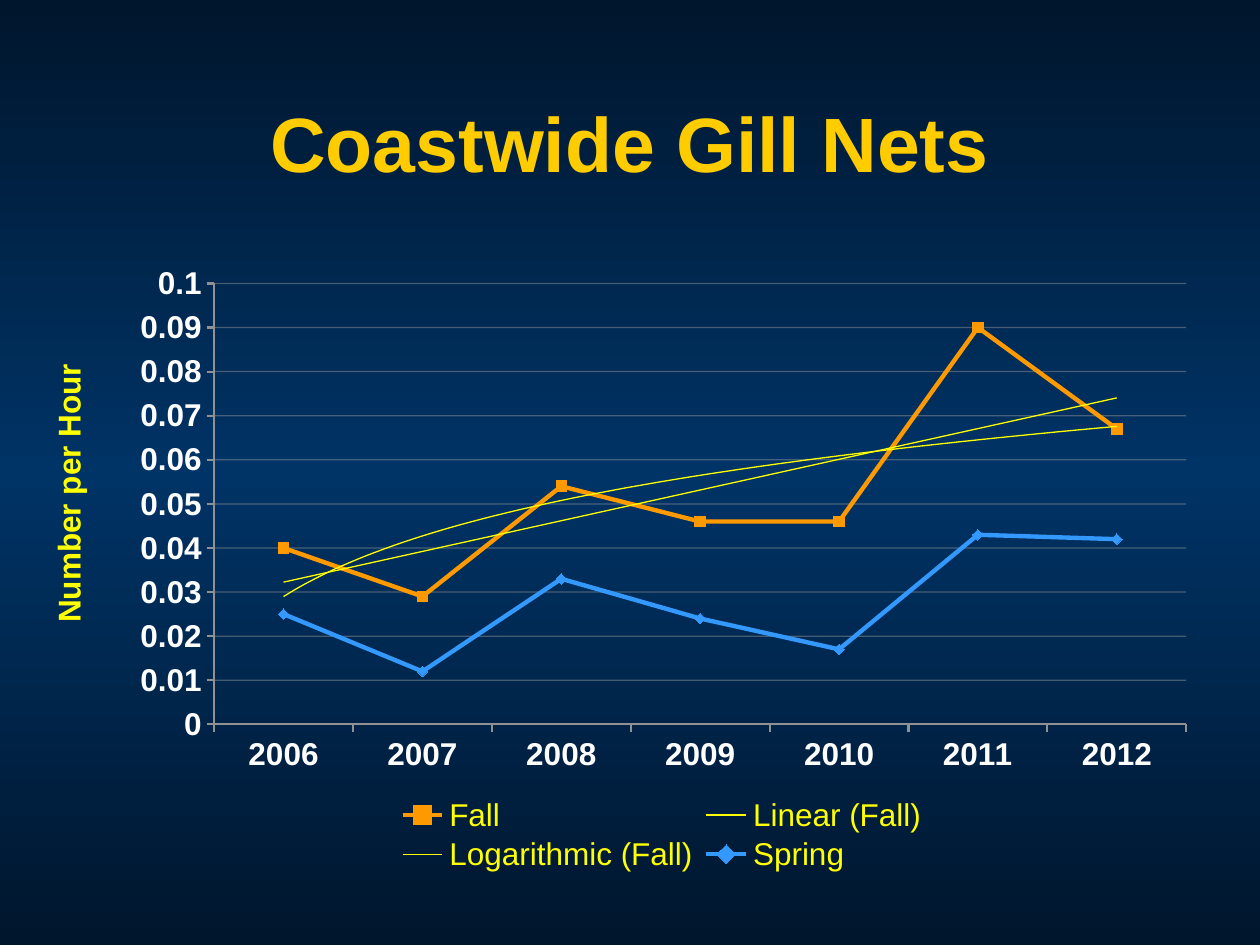
from copy import deepcopy

from lxml import etree
from pptx import Presentation
from pptx.chart.data import CategoryChartData
from pptx.dml.color import RGBColor
from pptx.enum import chart as ch, text
from pptx.oxml import parse_xml
from pptx.oxml.ns import nsdecls, qn
from pptx.util import Pt

NIGHT = RGBColor(0x00, 0x16, 0x2D)
NAVY = RGBColor(0x00, 0x33, 0x66)
GOLD = RGBColor(0xFF, 0xCC, 0x00)
YELLOW = RGBColor(0xFF, 0xFF, 0x00)
WHITE = RGBColor(0xFF, 0xFF, 0xFF)
GREY = RGBColor(0x91, 0x91, 0x91)
ORANGE = RGBColor(0xFF, 0x99, 0x00)
BLUE = RGBColor(0x33, 0x99, 0xFF)

YEARS = [str(year) for year in range(2006, 2013)]
SERIES = [
    {"name": "Fall", "color": ORANGE, "marker": ch.XL_MARKER_STYLE.SQUARE,
     "values": (0.04, 0.029, 0.054, 0.046, 0.046, 0.09, 0.067),
     "trends": {"linear": "Linear (Fall)", "log": "Logarithmic (Fall)"}},
    {"name": "Spring", "color": BLUE, "marker": ch.XL_MARKER_STYLE.DIAMOND,
     "values": (0.025, 0.012, 0.033, 0.024, 0.017, 0.043, 0.042),
     "trends": {}},
]
LABELS = [
    {"text": "Coastwide Gill Nets", "at": (0, 36, 720, 90), "vert": "horz",
     "font": {"size": Pt(44), "color": GOLD, "bold": True}},
    {"text": "Number per Hour", "at": (20.9, 185.8, 36, 192.2), "vert": "vert270",
     "font": {"size": Pt(18), "color": YELLOW, "bold": True}},
]
CHART_AT = (66.2, 144, 624.2, 360)
PLOT_PART = {"x": 0.09, "y": 0.05, "w": 0.89, "h": 0.7}
LEGEND_PART = {"x": 0.25, "y": 0.86, "w": 0.5, "h": 0.13}


def style_font(font, values):
    font.name = "Arial"
    for key, value in values.items():
        if key == "color":
            font.color.rgb = value
        else:
            setattr(font, key, value)


def style_line(line, color, width):
    line.color.rgb = color
    line.width = Pt(width)


def paint_background(slide):
    fill = slide.background.fill
    fill.gradient()
    fill.gradient_angle = 90
    stops = fill.gradient_stops
    for stop, position in zip(stops, (0, 1)):
        stop.color.rgb = NIGHT
        stop.position = position
    first = slide.element.find(".//" + qn("a:gs"))
    first.addnext(deepcopy(first))
    middle = fill.gradient_stops[1]
    middle.color.rgb = NAVY
    middle.position = 0.5


def add_label(slide, label):
    box = slide.shapes.add_textbox(*map(Pt, label["at"]))
    frame = box.text_frame
    frame.word_wrap = True
    frame.vertical_anchor = text.MSO_ANCHOR.MIDDLE
    box.element.txBody.find(qn("a:bodyPr")).set("vert", label["vert"])
    para = frame.paragraphs[0]
    para.alignment = text.PP_ALIGN.CENTER
    span = para.add_run()
    span.text = label["text"]
    style_font(span.font, label["font"])


def manual_layout(part, target=None):
    """Layout element that places a chart part by fractions of the chart."""
    layout = parse_xml(f"<c:layout {nsdecls('c')}><c:manualLayout/></c:layout>")
    values = {"xMode": "edge", "yMode": "edge", **part}
    if target:
        values = {"layoutTarget": target, **values}
    for key, value in values.items():
        etree.SubElement(layout[0], qn("c:" + key)).set("val", str(value))
    return layout


def add_trend(series, kind, name):
    trend = parse_xml(
        f'<c:trendline {nsdecls("c", "a")}><c:name>{name}</c:name>'
        f'<c:spPr><a:ln w="{Pt(0.75)}"><a:solidFill><a:srgbClr val="{YELLOW}"/>'
        f'</a:solidFill></a:ln></c:spPr><c:trendlineType val="{kind}"/>'
        '<c:dispRSqr val="0"/><c:dispEq val="0"/></c:trendline>')
    series._element.find(qn("c:cat")).addprevious(trend)


def add_line_chart(slide):
    data = CategoryChartData()
    data.categories = YEARS
    for row in SERIES:
        data.add_series(row["name"], row["values"])
    chart = slide.shapes.add_chart(
        ch.XL_CHART_TYPE.LINE_MARKERS, *map(Pt, CHART_AT), data).chart
    chart.has_title = False
    style_font(chart.font, {"size": Pt(18), "color": YELLOW})

    chart.has_legend = True
    legend = chart.legend
    legend.position = ch.XL_LEGEND_POSITION.BOTTOM
    legend.include_in_layout = False
    style_font(legend.font, {"size": Pt(18), "color": YELLOW})

    for axis in (chart.category_axis, chart.value_axis):
        axis.major_tick_mark = ch.XL_TICK_MARK.OUTSIDE
        axis.minor_tick_mark = ch.XL_TICK_MARK.NONE
        style_font(axis.tick_labels.font,
                   {"size": Pt(18), "color": WHITE, "bold": True})
        style_line(axis.format.line, GREY, 1.25)
    scale = chart.value_axis
    scale.minimum_scale, scale.maximum_scale, scale.major_unit = 0, 0.1, 0.01
    scale.tick_labels.number_format = "General"
    scale.tick_labels.number_format_is_linked = False
    scale.has_major_gridlines = True
    grid = scale.major_gridlines
    style_line(grid.format.line, GREY, 0.75)

    plot = chart.plots[0]
    plot.vary_by_categories = False
    for series, row in zip(plot.series, SERIES):
        series.smooth = False
        style_line(series.format.line, row["color"], 2.5)
        marker = series.marker
        marker.style = row["marker"]
        marker.size = 6
        marker.format.fill.solid()
        marker.format.fill.fore_color.rgb = row["color"]
        style_line(marker.format.line, row["color"], 0.75)
        for kind, name in row["trends"].items():
            add_trend(series, kind, name)

    root = chart.element
    grid_color = root.find(".//" + qn("c:majorGridlines")).find(".//" + qn("a:srgbClr"))
    etree.SubElement(grid_color, qn("a:alpha")).set("val", "50000")
    area = root.find(".//" + qn("c:plotArea"))
    for old in area.findall(qn("c:layout")):
        area.remove(old)
    area.insert(0, manual_layout(PLOT_PART, "inner"))
    key = root.find(".//" + qn("c:legend"))
    for old in key.findall(qn("c:layout")):
        key.remove(old)
    key.find(qn("c:legendPos")).addnext(manual_layout(LEGEND_PART))


def main():
    deck = Presentation()
    deck.slide_width, deck.slide_height = Pt(720), Pt(540)
    slide = deck.slides.add_slide(deck.slide_layouts[6])
    paint_background(slide)
    title, axis_name = LABELS
    add_label(slide, title)
    add_line_chart(slide)
    add_label(slide, axis_name)
    deck.save("out.pptx")


if __name__ == "__main__":
    main()
